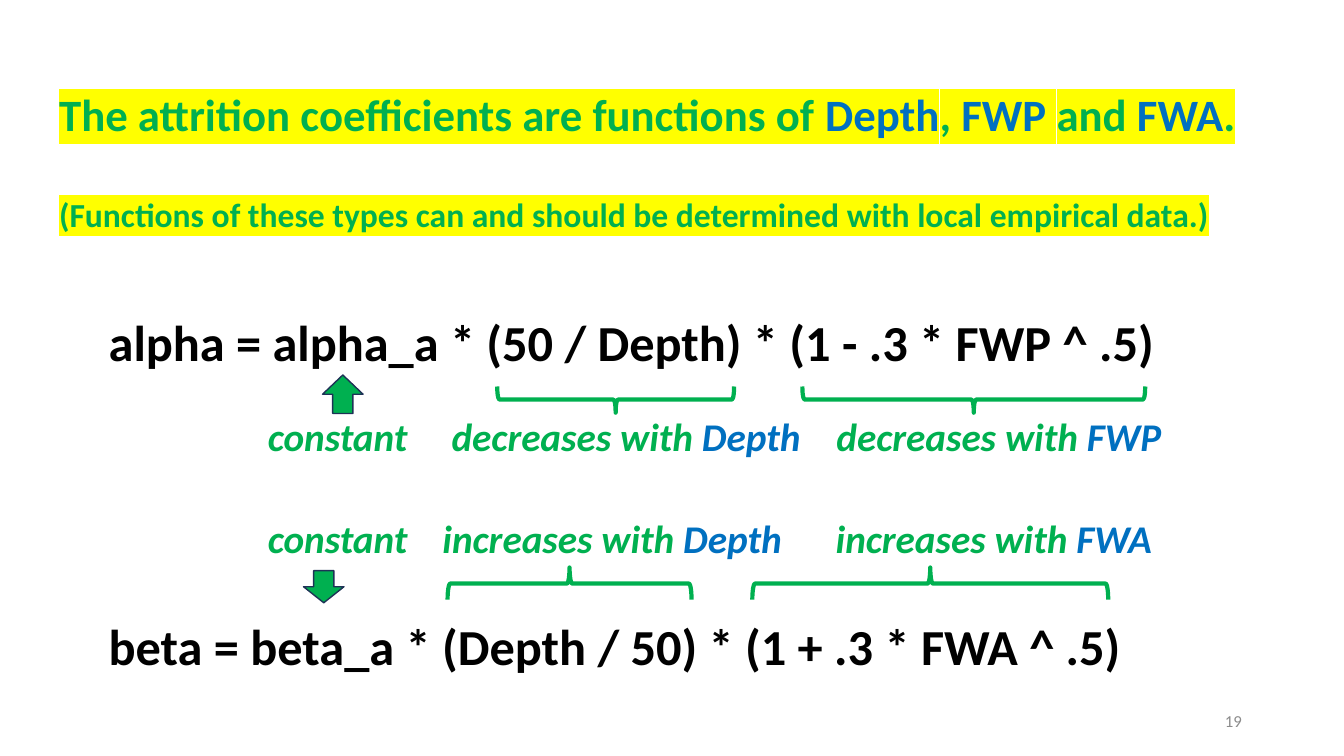
"""Build the slide on attrition coefficients as functions of Depth, FWP and FWA."""
from dataclasses import dataclass

from lxml.etree import SubElement
from pptx import Presentation
from pptx.dml.color import RGBColor
from pptx.enum.shapes import MSO_SHAPE
from pptx.enum.text import MSO_ANCHOR, PP_ALIGN
from pptx.oxml.ns import qn
from pptx.util import Cm, Pt

GREEN, BLUE, BLACK = "00B050", "0070C0", "000000"
GREY, YELLOW, NAVY = "8C8C8C", "FFFF00", "1E3256"
LABEL_HEIGHT = 1.45


@dataclass
class Box:
    left: float
    top: float
    width: float
    height: float

    def lengths(self):
        return Cm(self.left), Cm(self.top), Cm(self.width), Cm(self.height)


@dataclass
class Style:
    size: float
    bold: bool = True
    italic: bool = False
    highlight: str = ""


@dataclass
class Line:
    words: list[tuple[str, str]]
    style: Style
    space_before: float = 0


@dataclass
class Label:
    left: float
    top: float
    width: float
    effect: str
    variable: str = ""


@dataclass
class Brace:
    box: Box
    rotation: int


@dataclass
class Arrow:
    box: Box
    kind: MSO_SHAPE


def rgb(color: str) -> RGBColor:
    return RGBColor.from_string(color)


def add_run(p, text: str, color: str, style: Style) -> None:
    r = p.add_run()
    r.text = text
    font = r.font
    font.size, font.bold, font.italic = Pt(style.size), style.bold, style.italic
    font.color.rgb = rgb(color)
    if style.highlight:
        rpr = r._r.get_or_add_rPr()
        highlight = SubElement(rpr, qn("a:highlight"))
        SubElement(highlight, qn("a:srgbClr"), val=style.highlight)
        rpr.find(qn("a:solidFill")).addnext(highlight)
    font.name = "Calibri"


def add_text(slide, box: Box, lines: list[Line], wrap: bool = True):
    tf = slide.shapes.add_textbox(*box.lengths()).text_frame
    tf.word_wrap = wrap
    for i, line in enumerate(lines):
        p = tf.add_paragraph() if i else tf.paragraphs[0]
        if line.space_before:
            p.space_before = Pt(line.space_before)
        for text, color in line.words:
            add_run(p, text, color, line.style)
    return tf


def add_label(slide, label: Label) -> None:
    words = [(label.effect, GREEN)]
    if label.variable:
        words.append((label.variable, BLUE))
    box = Box(label.left, label.top, label.width, LABEL_HEIGHT)
    add_text(slide, box, [Line(words, Style(28, italic=True))], wrap=False)


def add_outline(slide, kind: MSO_SHAPE, box: Box, color: str, weight: float):
    sp = slide.shapes.add_shape(kind, *box.lengths())
    sp.shadow.inherit = False
    sp.line.color.rgb = rgb(color)
    sp.line.width = Pt(weight)
    return sp


def add_arrow(slide, arrow: Arrow) -> None:
    sp = add_outline(slide, arrow.kind, arrow.box, NAVY, 1)
    sp.fill.solid()
    sp.fill.fore_color.rgb = rgb(GREEN)


def add_brace(slide, brace: Brace) -> None:
    b = brace.box
    shift = (b.width - b.height) / 2
    upright = Box(b.left + shift, b.top - shift, b.height, b.width)
    sp = add_outline(slide, MSO_SHAPE.RIGHT_BRACE, upright, GREEN, 3)
    sp.fill.background()
    sp.rotation = brace.rotation


TITLE = [
    ("The attrition coefficients are functions of ", GREEN), ("Depth", BLUE),
    (",", GREEN), (" ", BLACK), ("FWP", BLUE), (" ", BLACK), ("and", GREEN),
    (" ", BLACK), ("FWA", BLUE), (".", GREEN),
]
NOTE = "(Functions of these types can and should be determined with local empirical data.)"
ALPHA = "alpha = alpha_a * (50 / Depth) * (1 - .3 * FWP ^ .5)"
BETA = "beta = beta_a * (Depth / 50) * (1 + .3 * FWA ^ .5)"

ALPHA_TOP, BETA_TOP = 10.26, 12.83
LABELS = [
    Label(6.5, ALPHA_TOP, 4.1, "constant"),
    Label(11.13, ALPHA_TOP, 9.4, "decreases with ", "Depth"),
    Label(20.83, ALPHA_TOP, 8.8, "decreases with ", "FWP"),
    Label(6.5, BETA_TOP, 4.1, "constant"),
    Label(10.9, BETA_TOP, 9.2, "increases with ", "Depth"),
    Label(20.81, BETA_TOP, 8.6, "increases with ", "FWA"),
]
ARROWS = [
    Arrow(Box(7.65, 14.38, 1.02, 0.81), MSO_SHAPE.DOWN_ARROW),
    Arrow(Box(8.13, 9.45, 1.02, 0.97), MSO_SHAPE.UP_ARROW),
]
POINT_DOWN, POINT_UP = 90, 270
BRACES = [
    Brace(Box(12.53, 9.74, 5.97, 0.66), POINT_DOWN),
    Brace(Box(20.22, 9.74, 8.64, 0.66), POINT_DOWN),
    Brace(Box(11.28, 14.3, 6.15, 0.81), POINT_UP),
    Brace(Box(18.96, 14.3, 8.97, 0.81), POINT_UP),
]


def main() -> None:
    prs = Presentation()
    prs.slide_width, prs.slide_height = Cm(33.87), Cm(19.05)
    slide = prs.slides.add_slide(prs.slide_layouts[6])

    tf = add_text(slide, Box(23.93, 17.65, 7.62, 1.02),
                  [Line([("19", GREY)], Style(12, bold=False))])
    tf.vertical_anchor = MSO_ANCHOR.MIDDLE
    tf.paragraphs[0].alignment = PP_ALIGN.RIGHT

    add_text(slide, Box(2.49, 7.72, 27.43, 9.5), [
        Line([(ALPHA, BLACK)], Style(36)),
        Line([(BETA, BLACK)], Style(36), space_before=174),
    ])
    add_text(slide, Box(1.24, 2.06, 32.05, 4.01), [
        Line(TITLE, Style(32, highlight=YELLOW)),
        Line([(NOTE, GREEN)], Style(24, highlight=YELLOW), space_before=38),
    ])
    for label in LABELS:
        add_label(slide, label)
    for arrow in ARROWS:
        add_arrow(slide, arrow)
    for brace in BRACES:
        add_brace(slide, brace)
    prs.save("out.pptx")


if __name__ == "__main__":
    main()
